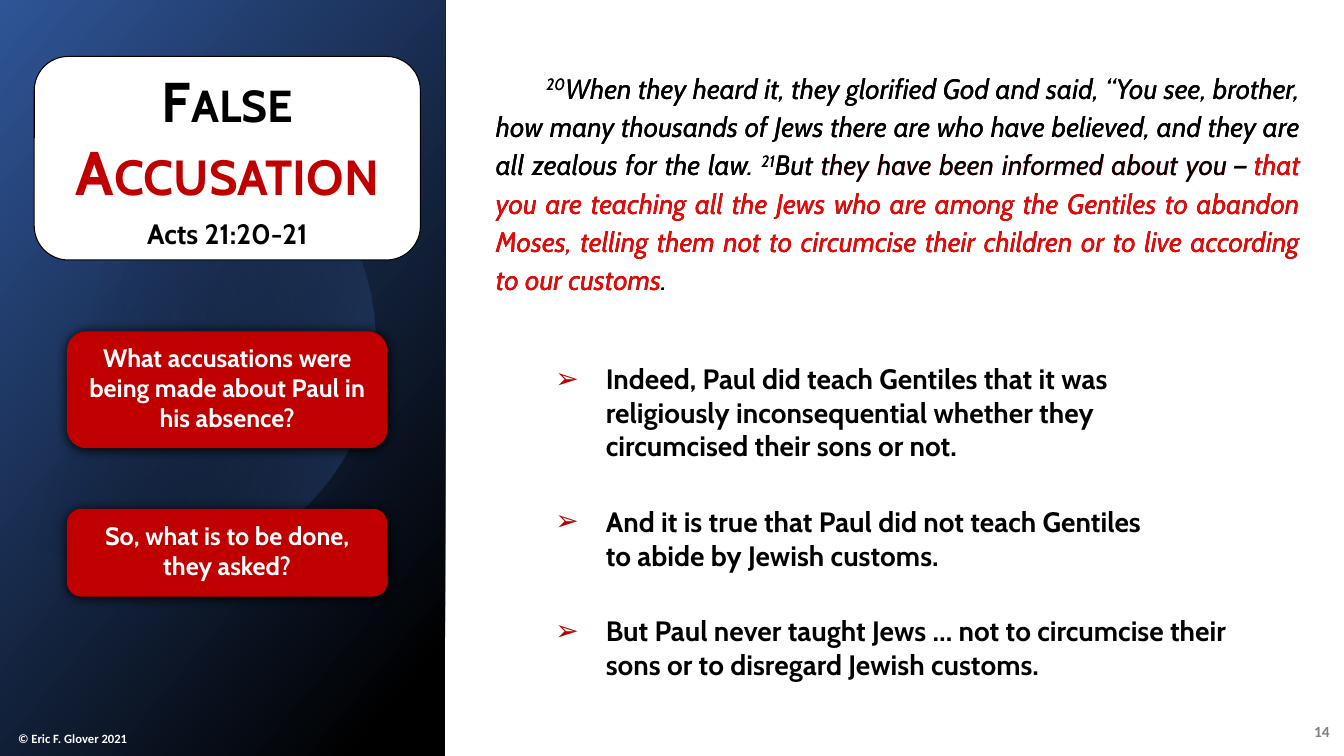
import copy
from lxml import etree
from pptx import Presentation, util as u
from pptx.dml import color
from pptx.enum import shapes, text
from pptx.oxml import ns

COLORS = {"black": "000000", "white": "FFFFFF", "navy": "2F5597", "orb": "4472C4",
          "card": "C00000", "bullet": "B90000", "verse": "FF0000", "number": "808080"}
LEFT, CENTER = text.PP_ALIGN.LEFT, text.PP_ALIGN.CENTER
RIGHT, JUSTIFY = text.PP_ALIGN.RIGHT, text.PP_ALIGN.JUSTIFY
TOP, MIDDLE, BOTTOM = text.MSO_ANCHOR.TOP, text.MSO_ANCHOR.MIDDLE, text.MSO_ANCHOR.BOTTOM
FIT, FIXED = text.MSO_AUTO_SIZE.SHAPE_TO_FIT_TEXT, text.MSO_AUTO_SIZE.NONE
THIN_SPACE = chr(0x2009)

# Disc outline in points: curves take three points, lines take one
DISC_START = (107.3, 79.2)
DISC = [[(177.1, 80.6), (241.2, 127.4), (261.4, 198)],
        [(286.6, 285.8), (236.2, 376.6), (149, 401.8)],
        [(94.3, 417.6), (38.2, 403.9), (-2.2, 370.1)],
        [(-10.8, 362.2)], [(-10.8, 126)], [(0, 115.9)],
        [(16.6, 102.2), (36, 92.2), (57.6, 85.7)],
        [(74.2, 81.4), (90.7, 79.2), (107.3, 79.2)]]


def rgb(name):
    return color.RGBColor.from_string(COLORS[name])


def sub(parent, tag, **attrs):
    return etree.SubElement(parent, ns.qn(tag), attrs)


def pts(box):
    return [u.Pt(v) for v in box]


def place(sp, box):
    """Move a placeholder to the box and bring it to the front."""
    sp.left, sp.top, sp.width, sp.height = pts(box)
    sp.element.getparent().append(sp.element)


def frame(sp, anchor=TOP, insets=(7.2, 3.6, 7.2, 3.6), auto_size=FIXED):
    tf = sp.text_frame
    tf.word_wrap, tf.auto_size, tf.vertical_anchor = True, auto_size, anchor
    tf.margin_left, tf.margin_top, tf.margin_right, tf.margin_bottom = pts(insets)
    return tf


def para(p, align=LEFT, after=0):
    p.alignment, p.space_before, p.space_after = align, u.Pt(0), u.Pt(after)


def style(r, size, fill="black", name="Cabin", bold=True, italic=False):
    r.font.size, r.font.name = u.Pt(size), name
    r.font.bold, r.font.italic = bold, italic
    r.font.color.rgb = rgb(fill)


def gradient(sp, angle, stops):
    """Stops hold position, colour name and opacity in percent."""
    sp.fill.gradient()
    sp.fill.gradient_angle = angle
    for stop, (position, name, _) in zip(sp.fill.gradient_stops, stops):
        stop.position, stop.color.rgb = position, rgb(name)
    for clr, (_, _, opacity) in zip(sp.element.spPr.iter(ns.qn("a:srgbClr")), stops):
        if opacity < 100:
            sub(clr, "a:alpha", val=str(opacity * 1000))
    sp.line.fill.background()
    sp.shadow.inherit = False


def rounded(s, box, fill):
    sp = s.shapes.add_shape(shapes.MSO_SHAPE.ROUNDED_RECTANGLE, *pts(box))
    sp.fill.solid()
    sp.fill.fore_color.rgb = rgb(fill)
    return sp


def panel(s, box):
    """Dark side panel with a faint disc cut off at the left."""
    sp = s.shapes.add_shape(shapes.MSO_SHAPE.RECTANGLE, *pts(box))
    gradient(sp, 140, [(0.08, "black", 100), (1, "navy", 100)])
    x, y = box[:2]
    fb = s.shapes.build_freeform(u.Pt(x + DISC_START[0]), u.Pt(y + DISC_START[1]))
    fb.add_line_segments([(u.Pt(x + px), u.Pt(y + py)) for part in DISC for px, py in part])
    disc = fb.convert_to_shape()
    # Join each group of three points into a curve
    lines = iter(list(disc.element.iter(ns.qn("a:lnTo"))))
    for part in DISC:
        group = [next(lines) for _ in part]
        if len(group) == 3:
            curve = etree.Element(ns.qn("a:cubicBezTo"))
            group[0].addprevious(curve)
            for line in group:
                curve.append(line[0])
                line.getparent().remove(line)
    gradient(disc, 346, [(0.29, "black", 0), (1, "orb", 43)])


def title_card(s, box):
    card = rounded(s, box, "white")
    card.line.color.rgb, card.line.width = rgb("black"), u.Pt(0.75)
    card.shadow.inherit = False
    sp = s.shapes.title
    place(sp, box)
    tf = frame(sp, MIDDLE, (0, 0, 0, 0))
    tf.text = "False\vAccusation\nActs 21:20-21"
    for p in tf.paragraphs:
        para(p, CENTER, 6)
    heading, passage = tf.paragraphs
    first, second = heading.runs
    style(first, 40)
    style(second, 44, "card")
    style(passage.runs[0], 20)
    for r in heading.runs:
        r._r.get_or_add_rPr().set("cap", "small")
    # The line break takes the size of the first line
    for br in sp.element.iter(ns.qn("a:br")):
        br.append(copy.deepcopy(first._r.get_or_add_rPr()))


def question(s, box, words):
    sp = rounded(s, box, "card")
    sp.line.fill.background()
    effects = sub(sp.element.spPr, "a:effectLst")
    shadow = sub(effects, "a:outerShdw", blurRad=str(u.Pt(8.5)), dist=str(u.Pt(1)),
                 dir="5400000", algn="t", rotWithShape="0")
    sub(shadow, "a:srgbClr", val=COLORS["black"])
    tf = frame(sp, MIDDLE, (7.2, 0, 7.2, 3.6))
    tf.text = words
    para(tf.paragraphs[0], CENTER)
    style(tf.paragraphs[0].runs[0], 18, "white")


def verse(s, box, ending):
    """Justified passage; the ending is a list of (words, colour)."""
    tf = frame(s.shapes.add_textbox(*pts(box)), TOP, (10.8, 7.2, 10.8, 7.2), FIT)
    p = tf.paragraphs[0]
    para(p, JUSTIFY, 6)
    p.line_spacing = 1.14
    pPr = p._p.get_or_add_pPr()
    pPr.set("marL", "0")
    pPr.set("indent", str(u.Pt(36)))
    opening = [("20", "black"),
               ("When they heard it, they glorified God and said, “You see, brother, how many "
                "thousands of Jews there are who have believed, and they are all zealous for "
                "the law. ", "black"),
               ("21", "black")]
    for words, fill in opening + ending:
        r = p.add_run()
        r.text = words
        style(r, 20, fill, bold=False, italic=True)
        if words.isdigit():
            r._r.get_or_add_rPr().set("baseline", "30000")


def bullets(s, box, items):
    sp = s.placeholders[1]
    place(sp, box)
    tf = frame(sp, auto_size=FIT)
    tf.text = "\n".join(items)
    for p in tf.paragraphs:
        para(p, LEFT, 30)
        pPr = p._p.get_or_add_pPr()
        pPr.set("marL", str(u.Pt(36)))
        pPr.set("indent", str(u.Pt(-36)))
        sub(sub(pPr, "a:buClr"), "a:srgbClr", val=COLORS["bullet"])
        sub(pPr, "a:buChar", char="➢")
        for r in p.runs:
            style(r, 20)


def small_print(s, box, words, size, fill, anchor, align):
    tf = frame(s.shapes.add_textbox(*pts(box)), anchor)
    tf.text = words
    para(tf.paragraphs[0], align)
    style(tf.paragraphs[0].runs[0], size, fill, "Calibri")


def main():
    prs = Presentation()
    prs.slide_width, prs.slide_height = u.Pt(960), u.Pt(540)
    s = prs.slides.add_slide(prs.slide_layouts[1])

    # Side panel
    panel(s, (0, 0, 318, 540))
    small_print(s, (5.8, 516.4, 113, 20), "© Eric F. Glover 2021", 9, "white", BOTTOM, LEFT)
    small_print(s, (921.5, 508.3, 35.5, 28.8), "14", 11, "number", MIDDLE, RIGHT)
    title_card(s, (24.5, 40.3, 275.8, 145.4))
    question(s, (47.8, 236.7, 229, 83.5),
             "What accusations were being made about Paul in his absence?")
    question(s, (47.8, 363.4, 229, 62.8), "So, what is to be done, they asked?")

    # Passage, with each emphasis in its own layer
    informed = "they have been informed about you"
    dash = THIN_SPACE + "—" + THIN_SPACE
    charge = ("that you are teaching all the Jews who are among the Gentiles to abandon Moses, "
              "telling them not to circumcise their children or to live according to our customs")
    for ending in ([("But ", "black"), (informed, "verse"), (dash + charge + ".", "black")],
                   [("But " + informed + dash, "black"), (charge, "verse"), (".", "black")]):
        verse(s, (343.5, 40.3, 596, 206), ending)

    # Answers
    bullets(s, (389.5, 254.7, 499.7, 237.6), [
        "Indeed, Paul did teach Gentiles that it was religiously inconsequential whether they "
        "circumcised their sons or not.",
        "And it is true that Paul did not teach Gentiles \vto abide by Jewish customs.",
        "But Paul never taught Jews … not to circumcise their sons or to disregard Jewish "
        "customs."])
    prs.save("out.pptx")


if __name__ == "__main__":
    main()
